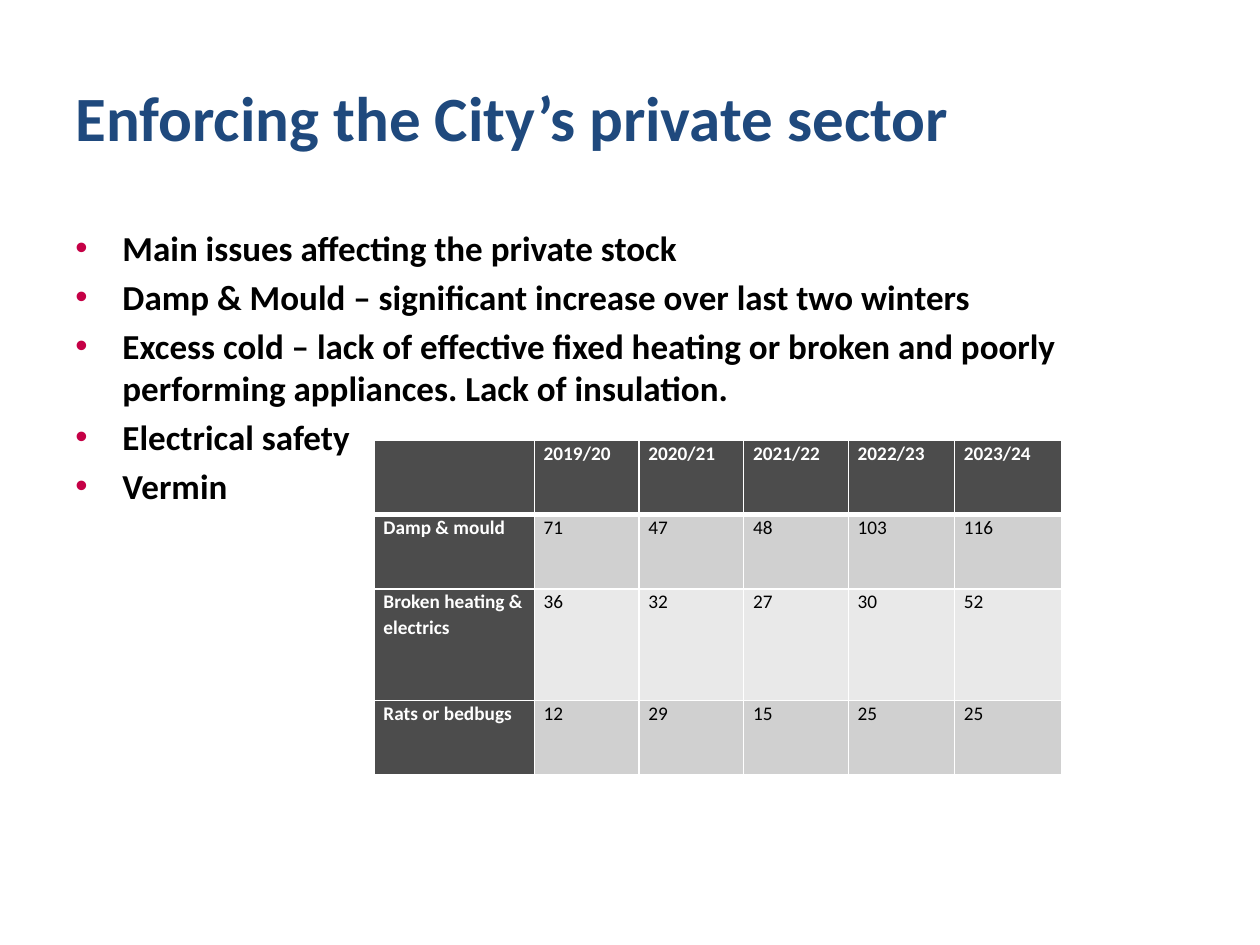
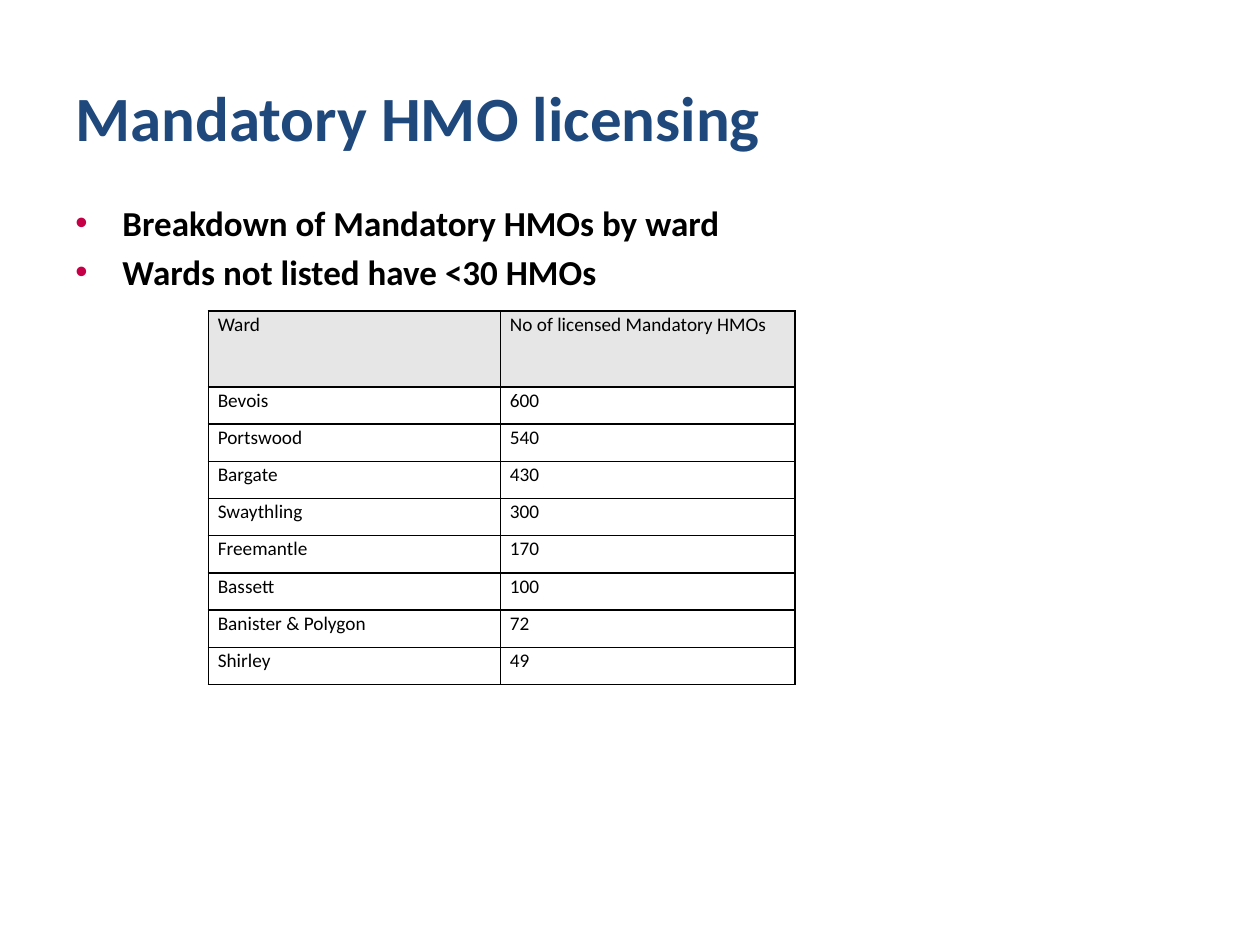
from pptx import Presentation
from pptx.dml.color import RGBColor
from pptx.enum.text import MSO_ANCHOR
from pptx.oxml.ns import qn
from pptx.util import Cm, Pt
from lxml.etree import SubElement

FONT = "Calibri"
NAVY, CRIMSON, BLACK, WHITE = "1F497D", "C50046", "000000", "FFFFFF"
CHARCOAL, MID_GREY, PALE_GREY, HEADER_GREY = "4C4C4C", "D0D0D0", "E9E9E9", "E7E6E6"

# Boxes are left, top, width, height in centimetres
TITLE_BOX = (1.27, 0.76, 22.86, 3.18)


def rgb(hex_colour):
    return RGBColor.from_string(hex_colour)


def style(para, size, colour, bold=False):
    font = para.font
    font.name, font.size, font.bold = FONT, Pt(size), bold
    font.color.rgb = rgb(colour)


def add_text_frame(page, box):
    frame = page.shapes.add_textbox(*map(Cm, box)).text_frame
    frame.word_wrap = True
    return frame


def add_title(page, text):
    frame = add_text_frame(page, TITLE_BOX)
    frame.vertical_anchor = MSO_ANCHOR.MIDDLE
    frame.text = text
    style(frame.paragraphs[0], 36, NAVY, bold=True)


def add_bullets(page, box, lines):
    frame = add_text_frame(page, box)
    for index, line in enumerate(lines):
        para = frame.add_paragraph() if index else frame.paragraphs[0]
        para.text = line
        if index:
            para.space_before = Pt(4)
        # Hanging indent with a coloured bullet
        props = para._p.get_or_add_pPr()
        props.set("marL", str(Cm(0.95)))
        props.set("indent", str(-Cm(0.95)))
        colour = SubElement(props, qn("a:buClr"))
        SubElement(colour, qn("a:srgbClr"), val=CRIMSON)
        SubElement(props, qn("a:buFont"), typeface="Arial")
        SubElement(props, qn("a:buChar"), char="•")
        style(para, 20, BLACK, bold=True)


def set_borders(cell, colour, top=1, bottom=1):
    props = cell._tc.get_or_add_tcPr()
    for side, width in (("L", 1), ("R", 1), ("T", top), ("B", bottom)):
        line = SubElement(props, qn(f"a:ln{side}"), w=str(Pt(width)))
        fill = SubElement(line, qn("a:solidFill"))
        SubElement(fill, qn("a:srgbClr"), val=colour)


def add_grid(page, corner, widths, heights, records, border, look, rule=1):
    """look(row, column) gives fill, text colour and bold; rule is the line under the header."""
    size = (sum(widths), sum(heights))
    table = page.shapes.add_table(len(heights), len(widths),
                                  *map(Cm, corner + size)).table
    table.first_row = table.horz_banding = False
    for column, width in zip(table.columns, widths):
        column.width = Cm(width)
    for r, (height, record) in enumerate(zip(heights, records)):
        table.rows[r].height = Cm(height)
        for c, value in enumerate(record):
            cell = table.cell(r, c)
            fill, colour, bold = look(r, c)
            cell.margin_left = cell.margin_right = Cm(0.19)
            cell.margin_top = cell.margin_bottom = 0
            set_borders(cell, border, top=rule if r == 1 else 1,
                        bottom=rule if r == 0 else 1)
            if fill:
                cell.fill.solid()
                cell.fill.fore_color.rgb = rgb(fill)
            else:
                cell.fill.background()
            cell.text = value
            para = cell.text_frame.paragraphs[0]
            para.line_spacing, para.space_after = 1.07, Pt(8)
            style(para, 11, colour, bold)


def issue_look(row, column):
    if row == 0 or column == 0:
        return CHARCOAL, WHITE, True
    return (MID_GREY if row % 2 else PALE_GREY), BLACK, False


def ward_look(row, column):
    return (None if row else HEADER_GREY), BLACK, False


def private_sector_page(page):
    add_title(page, "Enforcing the City’s private sector")
    add_bullets(page, (1.27, 4.45, 22.86, 11.94), [
        "Main issues affecting the private stock",
        "Damp & Mould – significant increase over last two winters",
        "Excess cold – lack of effective fixed heating or broken and poorly "
        "performing appliances. Lack of insulation.",
        "Electrical safety",
        "Vermin",
    ])
    records = [
        ("", "2019/20", "2020/21", "2021/22", "2022/23", "2023/24"),
        ("Damp & mould", "71", "47", "48", "103", "116"),
        ("Broken heating & electrics", "36", "32", "27", "30", "52"),
        ("Rats or bedbugs", "12", "29", "15", "25", "25"),
    ]
    add_grid(page, (7.54, 8.87), [3.23, 2.11, 2.11, 2.11, 2.14, 2.16],
             [1.5, 1.5, 2.25, 1.5], records, WHITE, issue_look, rule=3)


def licensing_page(page):
    add_title(page, "Mandatory HMO licensing")
    add_bullets(page, (1.27, 3.94, 22.86, 12.45), [
        "Breakdown of Mandatory HMOs by ward",
        "Wards not listed have <30 HMOs",
    ])
    records = [
        ("Ward", "No of licensed Mandatory HMOs"),
        ("Bevois", "600"),
        ("Portswood", "540"),
        ("Bargate", "430"),
        ("Swaythling", "300"),
        ("Freemantle", "170"),
        ("Bassett", "100"),
        ("Banister & Polygon", "72"),
        ("Shirley", "49"),
    ]
    add_grid(page, (4.2, 6.27), [5.89, 5.94], [1.53] + [0.75] * 8,
             records, BLACK, ward_look)


def main():
    deck = Presentation()
    deck.slide_width, deck.slide_height = Cm(25.4), Cm(19.05)
    for build in (private_sector_page, licensing_page):
        build(deck.slides.add_slide(deck.slide_layouts[6]))
    deck.save("out.pptx")


if __name__ == "__main__":
    main()
